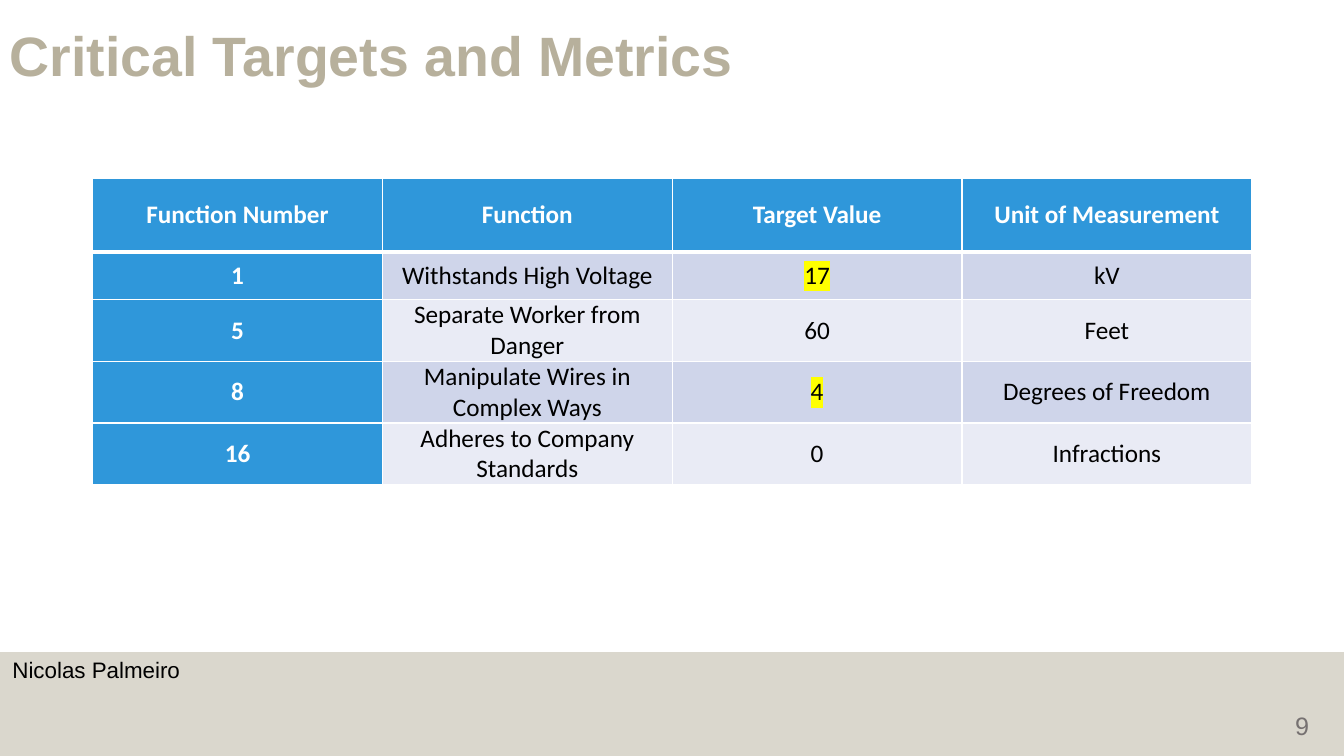
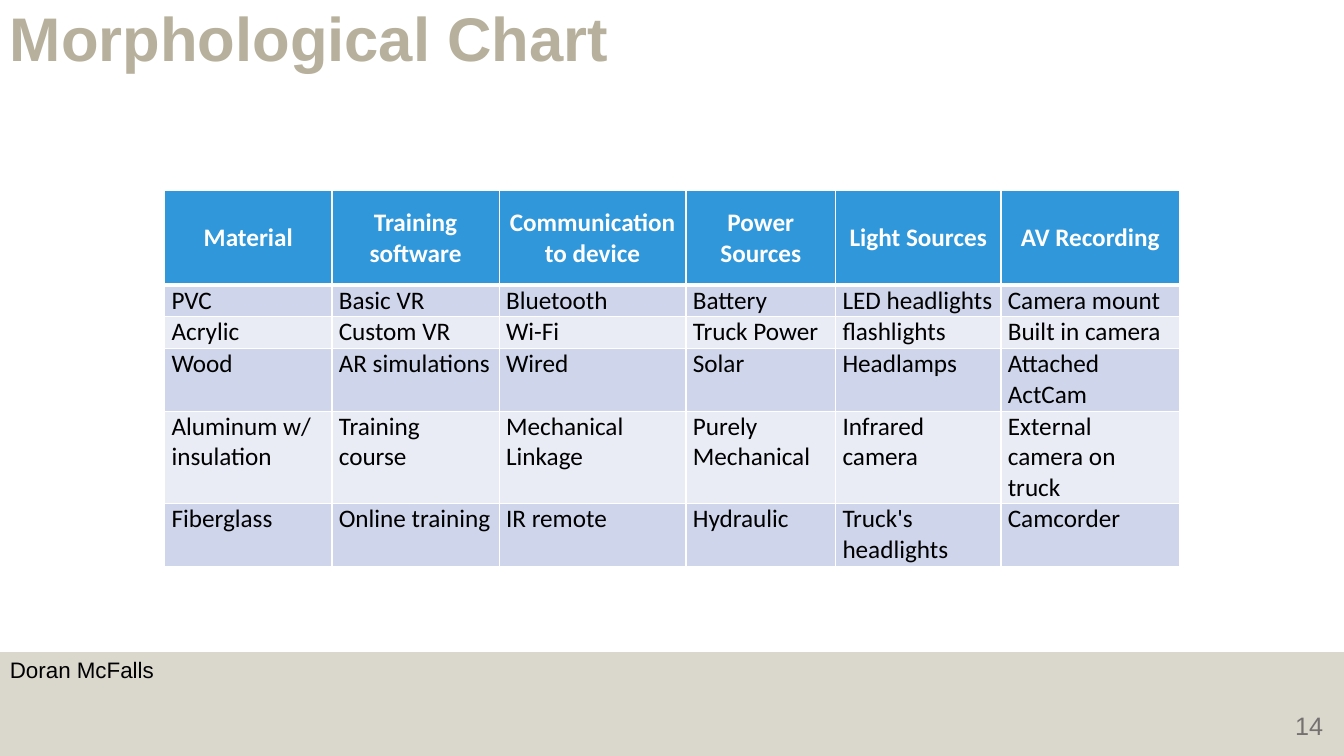
from dataclasses import dataclass

from lxml import etree
from pptx import Presentation
from pptx.dml.color import RGBColor
from pptx.enum import shapes, text as tx
from pptx.oxml import ns
from pptx.util import Pt


@dataclass(frozen=True)
class Theme:
    sand: str = "B7B09C"
    blue: str = "2F97DA"
    dark: str = "CFD5EA"
    pale: str = "E9EBF5"
    white: str = "FFFFFF"
    black: str = "000000"
    grey: str = "767171"
    mark: str = "FFFF00"
    sans: str = "Arial"
    body: str = "Calibri"
    cell: float = 18
    note: float = 16
    page: float = 18


@dataclass(frozen=True)
class Box:
    left: float
    top: float
    width: float
    height: float

    def pts(self) -> list:
        return [Pt(v) for v in (self.left, self.top, self.width, self.height)]


@dataclass(frozen=True)
class Grid:
    left: float
    top: float
    cols: tuple
    rows: tuple
    cells: tuple
    side: bool = False
    marks: tuple = ()


@dataclass(frozen=True)
class Page:
    title: str
    size: float
    head: Box
    name: str
    inset: float
    num: str
    grid: Grid


T = Theme()
WIDE, HIGH = 960, 540
BAND = Box(0, 465.9, WIDE, 74.1)
CENTER = tx.PP_ALIGN.CENTER
MIDDLE = tx.MSO_ANCHOR.MIDDLE

PAGES = (
    Page(
        "Critical Targets and Metrics", 39.6, Box(0, 0, 539.3, 83.5),
        "Nicolas Palmeiro", 1.8, "9",
        Grid(
            66.2, 127.6, (207,) * 4, (52.3, 34.3, 44, 44, 44),
            (
                ("Function Number", "Function", "Target Value", "Unit of Measurement"),
                ("1", "Withstands High Voltage", "17", "kV"),
                ("5", "Separate Worker from Danger", "60", "Feet"),
                ("8", "Manipulate Wires in Complex Ways", "4", "Degrees of Freedom"),
                ("16", "Adheres to Company Standards", "0", "Infractions"),
            ),
            side=True, marks=((1, 2), (3, 2)),
        ),
    ),
    Page(
        "Morphological Chart", 44, Box(0, 0.7, 457.9, 58.3),
        "Doran McFalls", 0, "14",
        Grid(
            117.6, 136.3, (119.5, 119.5, 133.4, 106.9, 118.1, 127.6),
            (67.5, 22.5, 22.5, 45, 66, 45),
            (
                ("Material", "Training software", "Communication to device",
                 "Power Sources", "Light Sources", "AV Recording"),
                ("PVC", "Basic VR", "Bluetooth", "Battery", "LED headlights", "Camera mount"),
                ("Acrylic", "Custom VR", "Wi-Fi", "Truck Power", "flashlights", "Built in camera"),
                ("Wood", "AR simulations", "Wired", "Solar", "Headlamps", "Attached ActCam"),
                ("Aluminum w/ insulation", "Training course", "Mechanical Linkage",
                 "Purely Mechanical", "Infrared camera", "External camera on truck"),
                ("Fiberglass", "Online training", "IR remote", "Hydraulic",
                 "Truck's headlights", "Camcorder"),
            ),
        ),
    ),
)


def write(frame, text: str, *, size: float, font: str = T.sans, color: str = T.black,
          bold: bool = False, align=tx.PP_ALIGN.LEFT, space: float = 1, mark: str = "") -> None:
    para = frame.paragraphs[0]
    para.alignment = align
    para.line_spacing = space
    run = para.add_run()
    run.text = text
    run.font.size = Pt(size)
    run.font.bold = bold
    run.font.color.rgb = RGBColor.from_string(color)
    if mark:
        light = etree.SubElement(run.font._element, ns.qn("a:highlight"))
        etree.SubElement(light, ns.qn("a:srgbClr"), val=mark)
    run.font.name = font


def label(slide, box: Box, text: str, anchor=MIDDLE, **form) -> None:
    frame = slide.shapes.add_textbox(*box.pts()).text_frame
    frame.word_wrap = True
    frame.vertical_anchor = anchor
    write(frame, text, **form)


def band(slide) -> None:
    shape = slide.shapes.add_shape(shapes.MSO_SHAPE.RECTANGLE, *BAND.pts())
    shape.shadow.inherit = False
    shape.line.fill.background()
    shape.fill.solid()
    shape.fill.fore_color.rgb = RGBColor.from_string(T.sand)
    tint = shape.fill._xPr.find(".//" + ns.qn("a:srgbClr"))
    etree.SubElement(tint, ns.qn("a:alpha"), val="50000")


def edge(cell, top: float, low: float) -> None:
    props = cell._tc.get_or_add_tcPr()
    sides = (("lnL", 1), ("lnR", 1), ("lnT", top), ("lnB", low))
    for spot, (side, width) in enumerate(sides):
        line = etree.Element(ns.qn("a:" + side), w=str(Pt(width)))
        fill = etree.SubElement(line, ns.qn("a:solidFill"))
        etree.SubElement(fill, ns.qn("a:srgbClr"), val=T.white)
        props.insert(spot, line)


def table(slide, grid: Grid) -> None:
    box = Box(grid.left, grid.top, sum(grid.cols), sum(grid.rows))
    tab = slide.shapes.add_table(len(grid.rows), len(grid.cols), *box.pts()).table
    for col, width in zip(tab.columns, grid.cols):
        col.width = Pt(width)
    for row, height in zip(tab.rows, grid.rows):
        row.height = Pt(height)
    for r, line in enumerate(grid.cells):
        for c, text in enumerate(line):
            cell = tab.cell(r, c)
            key = r == 0 or (grid.side and c == 0)
            mid = key or grid.side
            cell.margin_left = cell.margin_right = Pt(4.95)
            cell.margin_top = cell.margin_bottom = Pt(0)
            cell.vertical_anchor = MIDDLE if mid else tx.MSO_ANCHOR.TOP
            cell.fill.solid()
            shade = T.blue if key else (T.pale, T.dark)[r % 2]
            cell.fill.fore_color.rgb = RGBColor.from_string(shade)
            edge(cell, 3 if r == 1 else 1, 3 if r == 0 else 1)
            write(cell.text_frame, text, size=T.cell, font=T.body, bold=key,
                  color=T.white if key else T.black,
                  align=CENTER if mid else tx.PP_ALIGN.LEFT,
                  mark=T.mark if (r, c) in grid.marks else "")


def draw(deck, page: Page) -> None:
    slide = deck.slides.add_slide(deck.slide_layouts[6])
    band(slide)
    label(slide, page.head, page.title, size=page.size, color=T.sand, bold=True, space=0.9)
    table(slide, page.grid)
    label(slide, Box(page.inset, 467.3, 188, 28), page.name, tx.MSO_ANCHOR.TOP,
          size=T.note, space=0.9)
    label(slide, Box(918, 497, 42, 41.8), page.num, size=T.page, color=T.grey)


def main() -> None:
    deck = Presentation()
    deck.slide_width, deck.slide_height = Pt(WIDE), Pt(HIGH)
    for page in PAGES:
        draw(deck, page)
    deck.save("out.pptx")


if __name__ == "__main__":
    main()
